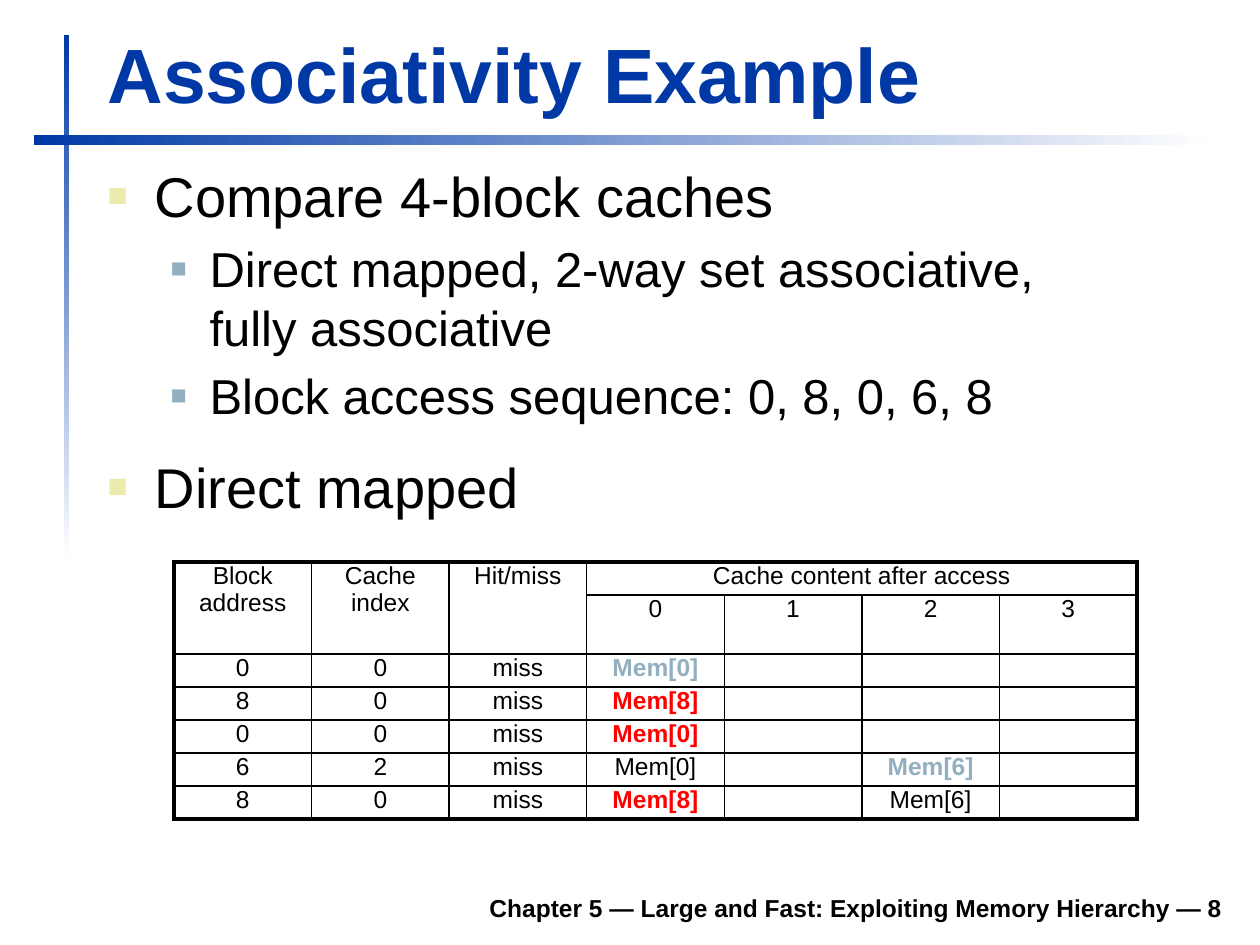
from lxml.etree import SubElement
from pptx import Presentation
from pptx.dml.color import RGBColor
from pptx.enum.shapes import MSO_SHAPE as Preset
from pptx.enum.text import MSO_ANCHOR as Anchor, MSO_AUTO_SIZE as AutoSize, PP_ALIGN as Align
from pptx.oxml.ns import qn
from pptx.util import Pt

PX = 914400 // 126
BLUE = RGBColor(0x00, 0x39, 0xA6)
WHITE = RGBColor(0xFF, 0xFF, 0xFF)
BLACK = RGBColor(0x00, 0x00, 0x00)
SAND = RGBColor(0xEC, 0xEA, 0xAC)
STEEL = RGBColor(0x91, 0xAF, 0xBF)
RED = RGBColor(0xFF, 0x00, 0x00)

LEVELS = [
    {"size": 32, "left": 47, "hang": 47, "bullet": SAND, "scale": 60},
    {"size": 28, "left": 102, "hang": 39, "bullet": STEEL, "scale": 55},
]
POINTS = [
    (0, "Compare 4-block caches", None),
    (1, "Direct mapped, 2-way set associative,\vfully associative", None),
    (1, "Block access sequence: 0, 8, 0, 6, 8", None),
    (0, "Direct mapped", 16),
]
HEADINGS = [
    ["Block address", "Cache index", "Hit/miss", "Cache content after access", "", "", ""],
    ["", "", "", "0", "1", "2", "3"],
]
ACCESSES = [
    ["0", "0", "miss", "Mem[0]", "", "", ""],
    ["8", "0", "miss", "Mem[8]", "", "", ""],
    ["0", "0", "miss", "Mem[0]", "", "", ""],
    ["6", "2", "miss", "Mem[0]", "", "Mem[6]", ""],
    ["8", "0", "miss", "Mem[8]", "", "Mem[6]", ""],
]
CHANGED_BLOCKS = {(2, 3): STEEL, (3, 3): RED, (4, 3): RED, (5, 5): STEEL, (6, 3): RED}


def emu(box):
    return [length * PX for length in box]


def place(placeholder, box):
    placeholder.left, placeholder.top, placeholder.width, placeholder.height = emu(box)


def write(paragraph, text, size, color=BLACK, bold=False):
    paragraph.text = text
    formats = {"name": "Arial", "size": Pt(size), "bold": bold}
    for run in paragraph.runs:
        for key, value in formats.items():
            setattr(run.font, key, value)
        run.font.color.rgb = color


def add_rules(slide, box):
    left, top, width, height = box
    upright = (left + 30, top, 5, height)
    level = (left, top + 100, width, 10)
    for bar_box, angle in ((upright, 270), (level, 0)):
        bar = slide.shapes.add_shape(Preset.RECTANGLE, *emu(bar_box))
        bar.shadow.inherit = False
        bar.line.fill.background()
        bar.fill.gradient()
        bar.fill.gradient_angle = angle
        for stop, color, position in zip(bar.fill.gradient_stops, (BLUE, WHITE), (0, 1)):
            stop.color.rgb = color
            stop.position = position


def add_footer(slide, box):
    frame = slide.shapes.add_textbox(*emu(box)).text_frame
    frame.word_wrap = True
    frame.vertical_anchor = Anchor.BOTTOM
    line = frame.paragraphs[0]
    line.alignment = Align.RIGHT
    write(line, "Chapter 5 — Large and Fast: Exploiting Memory Hierarchy — 8", 14, bold=True)


def add_title(slide, box):
    title = slide.shapes.title
    place(title, box)
    title.text_frame.vertical_anchor = Anchor.BOTTOM
    title.text_frame.auto_size = AutoSize.NONE
    heading = title.text_frame.paragraphs[0]
    heading.alignment = Align.LEFT
    write(heading, "Associativity Example", 44, BLUE, True)


def set_bullet(paragraph, style):
    props = paragraph._p.get_or_add_pPr()
    props.set("marL", str(style["left"] * PX))
    props.set("indent", str(-style["hang"] * PX))
    color = SubElement(props, qn("a:buClr"))
    SubElement(color, qn("a:srgbClr"), val=str(style["bullet"]))
    SubElement(props, qn("a:buSzPct"), val=str(style["scale"] * 1000))
    SubElement(props, qn("a:buFont"), typeface="Arial")
    SubElement(props, qn("a:buChar"), char="■")


def add_points(slide, box):
    body = slide.placeholders[1]
    place(body, box)
    frame = body.text_frame
    frame.auto_size = AutoSize.NONE
    for number, (level, text, space) in enumerate(POINTS):
        point = frame.add_paragraph() if number else frame.paragraphs[0]
        point.level = level
        if space:
            point.space_before = Pt(space)
        write(point, text, LEVELS[level]["size"])
        set_bullet(point, LEVELS[level])


def set_borders(cell, outer):
    props = cell._tc.get_or_add_tcPr()
    for index, side in enumerate("LRTB"):
        width = Pt(2.25 if outer[side] else 1)
        border = SubElement(props, qn("a:ln" + side), w=str(width))
        fill = SubElement(border, qn("a:solidFill"))
        SubElement(fill, qn("a:srgbClr"), val=str(BLACK))
        props.insert(index, border)


def add_cache_table(slide, box):
    rows = HEADINGS + ACCESSES
    last_row, last_col = len(rows) - 1, len(rows[0]) - 1
    table = slide.shapes.add_table(len(rows), len(rows[0]), *emu(box)).table
    table.first_row = table.horz_banding = False
    for col in range(3):
        table.cell(0, col).merge(table.cell(1, col))
    table.cell(0, 3).merge(table.cell(0, last_col))
    for r, row in enumerate(rows):
        for c, text in enumerate(row):
            cell = table.cell(r, c)
            cell.margin_top = cell.margin_bottom = 0
            cell.fill.background()
            entry = cell.text_frame.paragraphs[0]
            entry.alignment = Align.CENTER
            if text:
                changed = CHANGED_BLOCKS.get((r, c))
                write(entry, text, 14, changed or BLACK, changed is not None)
            else:
                SubElement(entry._p, qn("a:endParaRPr"), sz="1400")
            end_col = c + cell.span_width - 1 if cell.is_merge_origin else c
            set_borders(cell, {"L": c == 0, "R": end_col == last_col,
                               "T": r == 0, "B": r == last_row})


def main():
    deck = Presentation()
    deck.slide_width, deck.slide_height = emu((1260, 945))
    slide = deck.slides.add_slide(deck.slide_layouts[1])
    add_rules(slide, (34, 35, 1181, 525))
    add_footer(slide, (233, 880, 1002, 49))
    add_title(slide, (95, 20, 1138, 105))
    add_points(slide, (95, 155, 1140, 387))
    add_cache_table(slide, (174, 562, 963, 231))
    deck.save("out.pptx")


if __name__ == "__main__":
    main()
